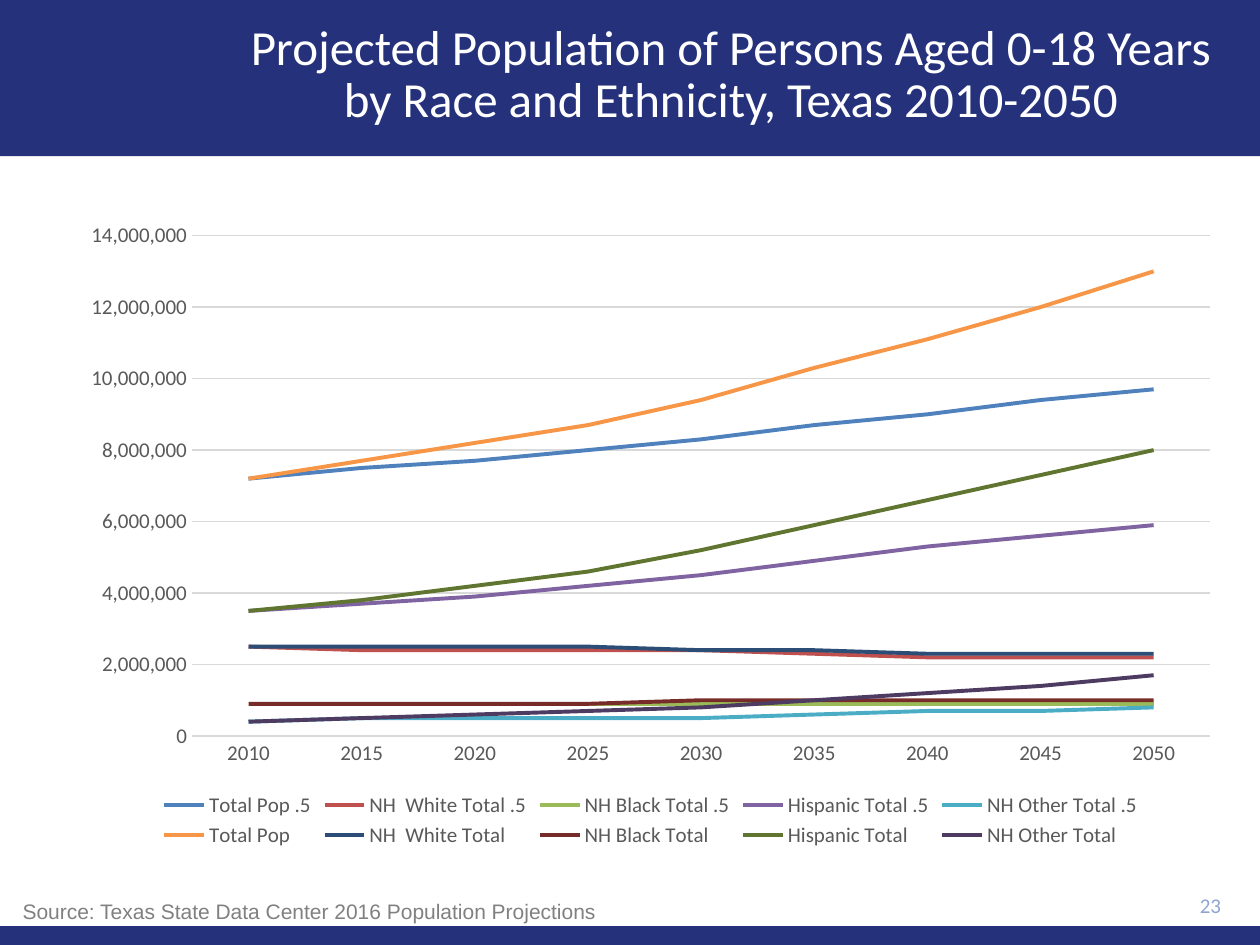
import pptx
import pptx.chart.data
import pptx.dml.color
import pptx.enum.chart
import pptx.enum.shapes
import pptx.enum.text
import pptx.util
from dataclasses import dataclass

Pt = pptx.util.Pt
ALIGN = pptx.enum.text.PP_ALIGN
ANCHOR = pptx.enum.text.MSO_ANCHOR


@dataclass(frozen=True)
class Theme:
    navy: str = "25327B"
    white: str = "FFFFFF"
    label: str = "595959"
    rule: str = "D9D9D9"
    number: str = "8FA5D1"
    source: str = "808080"
    font: str = "Calibri"
    source_font: str = "Arial"
    title_size: int = 28
    small_size: int = 12
    rule_width: float = 0.75
    series_width: float = 2.25


THEME = Theme()

YEARS = [str(year) for year in range(2010, 2051, 5)]

# Name, line colour, population in units of 100,000
SERIES = [
    ("Total Pop .5", "4F81BD", [72, 75, 77, 80, 83, 87, 90, 94, 97]),
    ("NH  White Total .5", "C0504D", [25, 24, 24, 24, 24, 23, 22, 22, 22]),
    ("NH Black Total .5", "9BBB59", [9] * 9),
    ("Hispanic Total .5", "8064A2", [35, 37, 39, 42, 45, 49, 53, 56, 59]),
    ("NH Other Total .5", "4BACC6", [4, 5, 5, 5, 5, 6, 7, 7, 8]),
    ("Total Pop", "F79646", [72, 77, 82, 87, 94, 103, 111, 120, 130]),
    ("NH  White Total", "2C4D75", [25, 25, 25, 25, 24, 24, 23, 23, 23]),
    ("NH Black Total", "772C2A", [9, 9, 9, 9, 10, 10, 10, 10, 10]),
    ("Hispanic Total", "5F7530", [35, 38, 42, 46, 52, 59, 66, 73, 80]),
    ("NH Other Total", "4D3B62", [4, 5, 6, 7, 8, 10, 12, 14, 17]),
]


def rgb(color):
    return pptx.dml.color.RGBColor.from_string(color)


def box_pt(box):
    return [Pt(value) for value in box]


def style_font(font, size, color, name=THEME.font):
    font.size = Pt(size)
    font.name = name
    font.color.rgb = rgb(color)


def style_line(line, color, width):
    line.color.rgb = rgb(color)
    line.width = Pt(width)


def add_band(s, box):
    """Full-width colour band, placed behind everything else."""
    sp = s.shapes.add_shape(pptx.enum.shapes.MSO_SHAPE.RECTANGLE, *box_pt(box))
    sp.shadow.inherit = False
    sp.fill.solid()
    sp.fill.fore_color.rgb = rgb(THEME.navy)
    sp.line.fill.background()
    s.shapes._spTree.insert(2, sp._element)


def write(sp, text, size, color, align, anchor, name=THEME.font):
    """Fill a text shape with one formatted paragraph."""
    tf = sp.text_frame
    tf.word_wrap = True
    tf.auto_size = pptx.enum.text.MSO_AUTO_SIZE.NONE
    tf.vertical_anchor = anchor
    p = tf.paragraphs[0]
    p.alignment = align
    r = p.add_run()
    r.text = text
    style_font(r.font, size, color, name)
    return p


def add_title(s, box, text):
    sp = s.shapes.title
    sp.left, sp.top, sp.width, sp.height = box_pt(box)
    p = write(sp, text, THEME.title_size, THEME.white, ALIGN.CENTER, ANCHOR.MIDDLE)
    p.line_spacing = 0.9


def style_axis(axis):
    axis.major_tick_mark = pptx.enum.chart.XL_TICK_MARK.NONE
    axis.minor_tick_mark = pptx.enum.chart.XL_TICK_MARK.NONE
    style_font(axis.tick_labels.font, THEME.small_size, THEME.label)


def add_population_chart(s, box):
    data = pptx.chart.data.CategoryChartData(number_format="#,##0")
    data.categories = YEARS
    for name, _, values in SERIES:
        data.add_series(name, [value * 100_000 for value in values])
    chart = s.shapes.add_chart(
        pptx.enum.chart.XL_CHART_TYPE.LINE, *box_pt(box), data).chart
    chart.has_title = False
    style_font(chart.font, THEME.small_size, THEME.label)

    # Lines
    chart.plots[0].vary_by_categories = False
    for series, (_, color, _) in zip(chart.plots[0].series, SERIES):
        series.smooth = False
        series.marker.style = pptx.enum.chart.XL_MARKER_STYLE.NONE
        style_line(series.format.line, color, THEME.series_width)

    # Axes
    years, people = chart.category_axis, chart.value_axis
    style_axis(years)
    style_line(years.format.line, THEME.rule, THEME.rule_width)
    style_axis(people)
    people.format.line.fill.background()
    people.minimum_scale, people.maximum_scale = 0, 14_000_000
    people.major_unit = 2_000_000
    people.tick_labels.number_format = "#,##0"
    people.tick_labels.number_format_is_linked = False
    people.has_major_gridlines = True
    style_line(people.major_gridlines.format.line, THEME.rule, THEME.rule_width)

    # Legend
    chart.has_legend = True
    chart.legend.position = pptx.enum.chart.XL_LEGEND_POSITION.BOTTOM
    chart.legend.include_in_layout = False
    style_font(chart.legend.font, THEME.small_size, THEME.label)


def add_slide_number(s, box, number):
    sp = s.shapes.add_textbox(*box_pt(box))
    write(sp, number, THEME.small_size, THEME.number, ALIGN.RIGHT, ANCHOR.MIDDLE)


def add_source(s, box, text):
    sp = s.shapes.add_textbox(*box_pt(box))
    write(sp, text, THEME.small_size, THEME.source, ALIGN.LEFT, ANCHOR.TOP,
          THEME.source_font)


def main():
    prs = pptx.Presentation()
    prs.slide_width, prs.slide_height = Pt(720), Pt(540)
    s = prs.slides.add_slide(prs.slide_layouts[5])  # Title Only
    add_band(s, (0, 0, 720, 89.3))
    add_band(s, (0, 529.2, 720, 10.8))
    add_title(s, (122.4, 7.2, 590.4, 72),
              "Projected Population of Persons Aged 0-18 Years "
              "by Race and Ethnicity, Texas 2010-2050")
    add_population_chart(s, (38.9, 120.2, 666, 367.2))
    add_slide_number(s, (640.8, 504.7, 64.1, 24.5), "23")
    add_source(s, (5.8, 509.8, 689.8, 21.6),
               "Source: Texas State Data Center 2016 Population Projections")
    prs.save("out.pptx")


if __name__ == "__main__":
    main()
